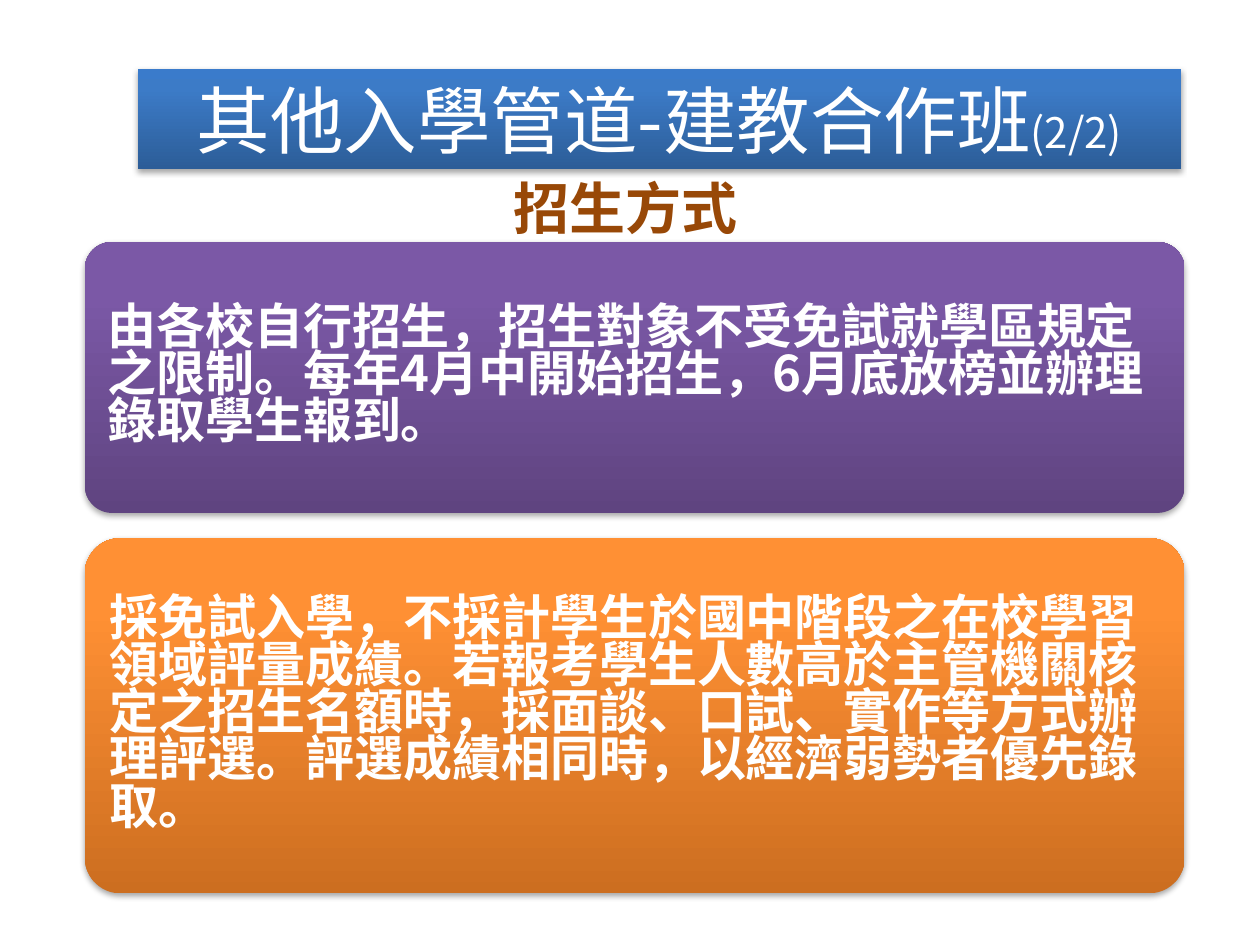
"""Builds the slide on how work-study classes admit students."""
from lxml import etree
from pptx import Presentation
from pptx import util as u
from pptx.dml.color import RGBColor
from pptx.enum import shapes, text
from pptx.oxml import parse_xml
from pptx.oxml.ns import nsdecls, qn

FONT = "Noto Sans CJK SC"


def write(paragraph, words, size, colour, bold):
    run = paragraph.add_run()
    run.text = words
    for name, value in {"name": FONT, "size": u.Pt(size), "bold": bold}.items():
        setattr(run.font, name, value)
    run.font.color.rgb = RGBColor.from_string(colour)
    etree.SubElement(run.font._element, qn("a:ea")).set("typeface", FONT)


def shade(panel, bottom, middle, top):
    stops = "".join(
        f'<a:gs pos="{place * 1000}"><a:srgbClr val="{colour}"/></a:gs>'
        for place, colour in ((0, bottom), (80, middle), (100, top)))
    panel._element.spPr.append(parse_xml(
        f'<a:gradFill {nsdecls("a")} rotWithShape="1"><a:gsLst>{stops}</a:gsLst>'
        '<a:lin ang="16200000" scaled="0"/></a:gradFill>'))
    panel.line.fill.background()
    panel._element.spPr.append(parse_xml(
        f'<a:effectLst {nsdecls("a")}><a:outerShdw blurRad="40000" dist="23000" '
        'dir="5400000" rotWithShape="0"><a:srgbClr val="000000"><a:alpha val="35000"/>'
        '</a:srgbClr></a:outerShdw></a:effectLst>'))


deck = Presentation()
deck.slide_width, deck.slide_height = u.Pt(720), u.Pt(540)
slide = deck.slides.add_slide(deck.slide_layouts[5])

title = slide.shapes.title
for name, value in {"left": 78.8, "top": 39.5, "width": 596, "height": 57}.items():
    setattr(title, name, u.Pt(value))
shade(title, "2C5D98", "3C7BC7", "3A7BCB")
title.text_frame.auto_size = text.MSO_AUTO_SIZE.NONE
title.text_frame.vertical_anchor = text.MSO_ANCHOR.MIDDLE
heading = title.text_frame.paragraphs[0]
heading.alignment = text.PP_ALIGN.CENTER
write(heading, "其他入學管道-建教合作班", 42, "FFFFFF", False)
write(heading, "(2/2)", 24, "FFFFFF", False)

subtitle = slide.shapes.add_textbox(u.Pt(286.6), u.Pt(95.8), u.Pt(144), u.Pt(46))
subtitle.text_frame.word_wrap = False
subtitle.text_frame.auto_size = text.MSO_AUTO_SIZE.SHAPE_TO_FIT_TEXT
write(subtitle.text_frame.paragraphs[0], "招生方式", 32, "984807", True)

rules = [
    (138.3, 154.8, ("5F4480", "7B58A6", "7C57A8"),
     "由各校自行招生，招生對象不受免試就學區規定之限制。每年4月中開始招生，6月底放榜並辦理錄取學生報到。"),
    (307.5, 203, ("CC6E20", "FF9034", "FF9136"),
     "採免試入學，不採計學生於國中階段之在校學習領域評量成績。若報考學生人數高於主管機關核定之招生名額時，"
     "採面談、口試、實作等方式辦理評選。評選成績相同時，以經濟弱勢者優先錄取。"),
]
inset = u.Pt(8.4)
frame_format = {
    "word_wrap": True, "vertical_anchor": text.MSO_ANCHOR.MIDDLE,
    "margin_left": inset, "margin_right": inset,
    "margin_top": inset, "margin_bottom": inset,
}
for top, height, colours, words in rules:
    rule = slide.shapes.add_shape(
        shapes.MSO_SHAPE.ROUNDED_RECTANGLE, u.Pt(48.5), u.Pt(top), u.Pt(628.5), u.Pt(height))
    rule.adjustments[0] = 0.1
    shade(rule, *colours)
    for name, value in frame_format.items():
        setattr(rule.text_frame, name, value)
    paragraph = rule.text_frame.paragraphs[0]
    paragraph.alignment = text.PP_ALIGN.LEFT
    paragraph.line_spacing = 0.8
    write(paragraph, words, 28, "FFFFFF", True)

deck.save("out.pptx")
